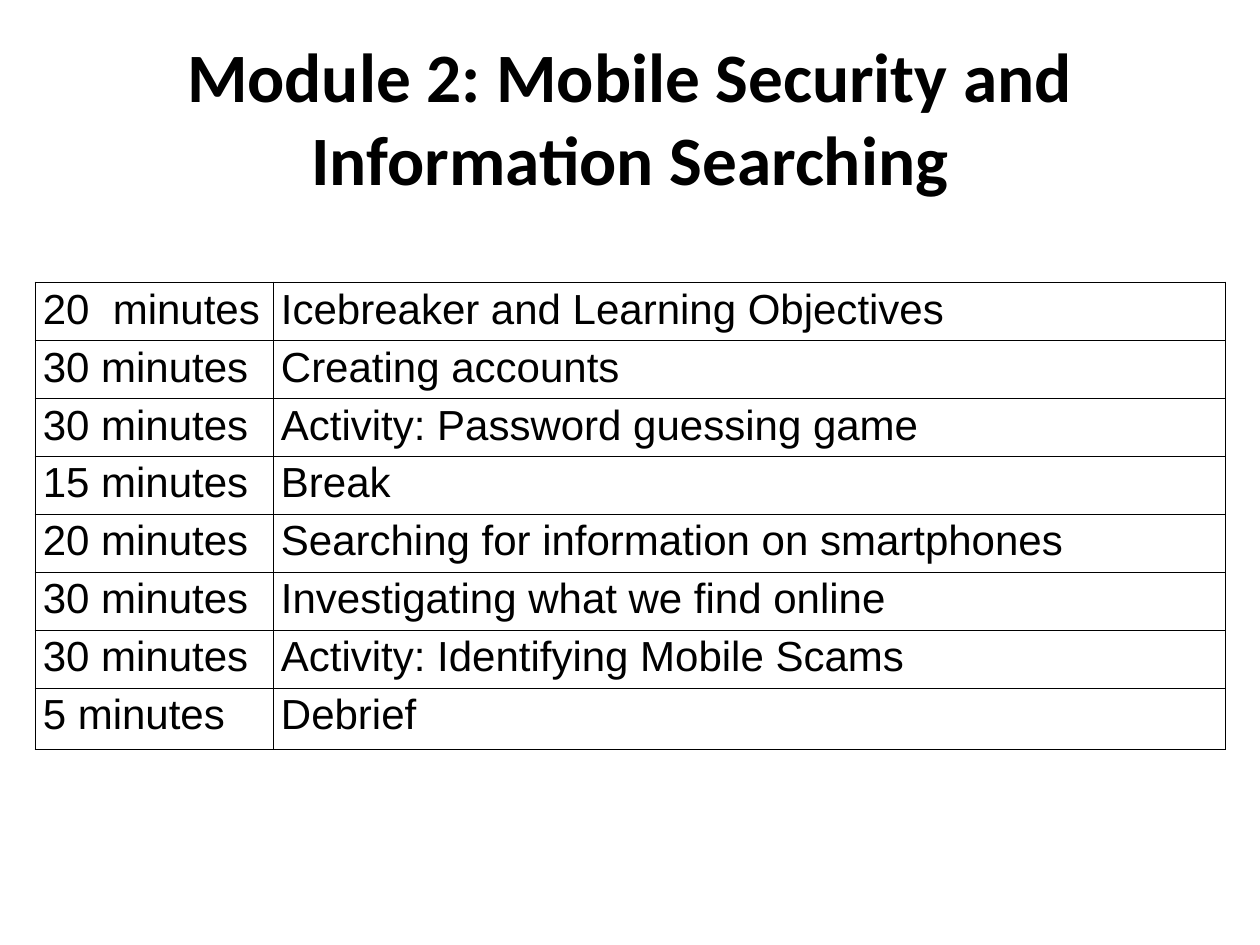
from lxml import etree
from pptx import Presentation
from pptx import util as u
from pptx.dml.color import RGBColor
from pptx.enum import text
from pptx.oxml import ns

COLORS = {"ink": "000000"}
AGENDA = [
    ("20  minutes", "Icebreaker and Learning Objectives"),
    ("30 minutes", "Creating accounts"),
    ("30 minutes", "Activity: Password guessing game"),
    ("15 minutes", "Break"),
    ("20 minutes", "Searching for information on smartphones"),
    ("30 minutes", "Investigating what we find online"),
    ("30 minutes", "Activity: Identifying Mobile Scams"),
    ("5 minutes", "Debrief"),
]


class Deck:
    """Holds the style and the slide being built."""
    title_font, title_size = "Calibri", 39.6
    body_font, body_size = "Arial", 24
    border_width = 0.75

    def __init__(self, width, height):
        self.prs = Presentation()
        self.prs.slide_width, self.prs.slide_height = u.Inches(width), u.Inches(height)
        self.s = self.prs.slides.add_slide(self.prs.slide_layouts[6])

    def run(self, p, words, font, size, bold=False):
        r = p.add_run()
        r.text = words
        r.font.name, r.font.size, r.font.bold = font, u.Pt(size), bold
        r.font.color.rgb = RGBColor.from_string(COLORS["ink"])

    def title(self, words, *box):
        tf = self.s.shapes.add_textbox(*map(u.Inches, box)).text_frame
        tf.word_wrap = True
        tf.vertical_anchor = text.MSO_ANCHOR.MIDDLE
        p = tf.paragraphs[0]
        p.alignment = text.PP_ALIGN.CENTER
        self.run(p, words, self.title_font, self.title_size, bold=True)

    def borders(self, cell):
        """Rule all four sides; the lines must precede the fill in tcPr."""
        tc_pr = cell._tc.get_or_add_tcPr()
        for i, side in enumerate(("lnL", "lnR", "lnT", "lnB")):
            ln = etree.Element(ns.qn(f"a:{side}"), w=str(u.Pt(self.border_width)))
            fill = etree.SubElement(ln, ns.qn("a:solidFill"))
            etree.SubElement(fill, ns.qn("a:srgbClr"), val=COLORS["ink"])
            tc_pr.insert(i, ln)

    def table(self, rows, left, top, widths, heights):
        frame = self.s.shapes.add_table(
            len(rows), len(widths), u.Inches(left), u.Inches(top),
            u.Inches(sum(widths)), u.Inches(sum(heights)))
        table = frame.table
        table.first_row = table.horz_banding = False
        for column, width in zip(table.columns, widths):
            column.width = u.Inches(width)
        for row, height, values in zip(table.rows, heights, rows):
            row.height = u.Inches(height)
            for cell, words in zip(row.cells, values):
                cell.margin_left = cell.margin_right = u.Inches(0.06)
                cell.margin_top = cell.margin_bottom = u.Inches(0.03)
                cell.fill.background()
                self.borders(cell)
                self.run(cell.text_frame.paragraphs[0], words,
                         self.body_font, self.body_size)


def main():
    deck = Deck(10, 7.5)
    deck.title("Module 2: Mobile Security and Information Searching", 0.5, 0.3, 9, 1.25)
    heights = [0.45] * (len(AGENDA) - 1) + [0.49]
    deck.table(AGENDA, 0.28, 2.24, [1.89, 7.56], heights)
    deck.prs.save("out.pptx")


if __name__ == "__main__":
    main()
